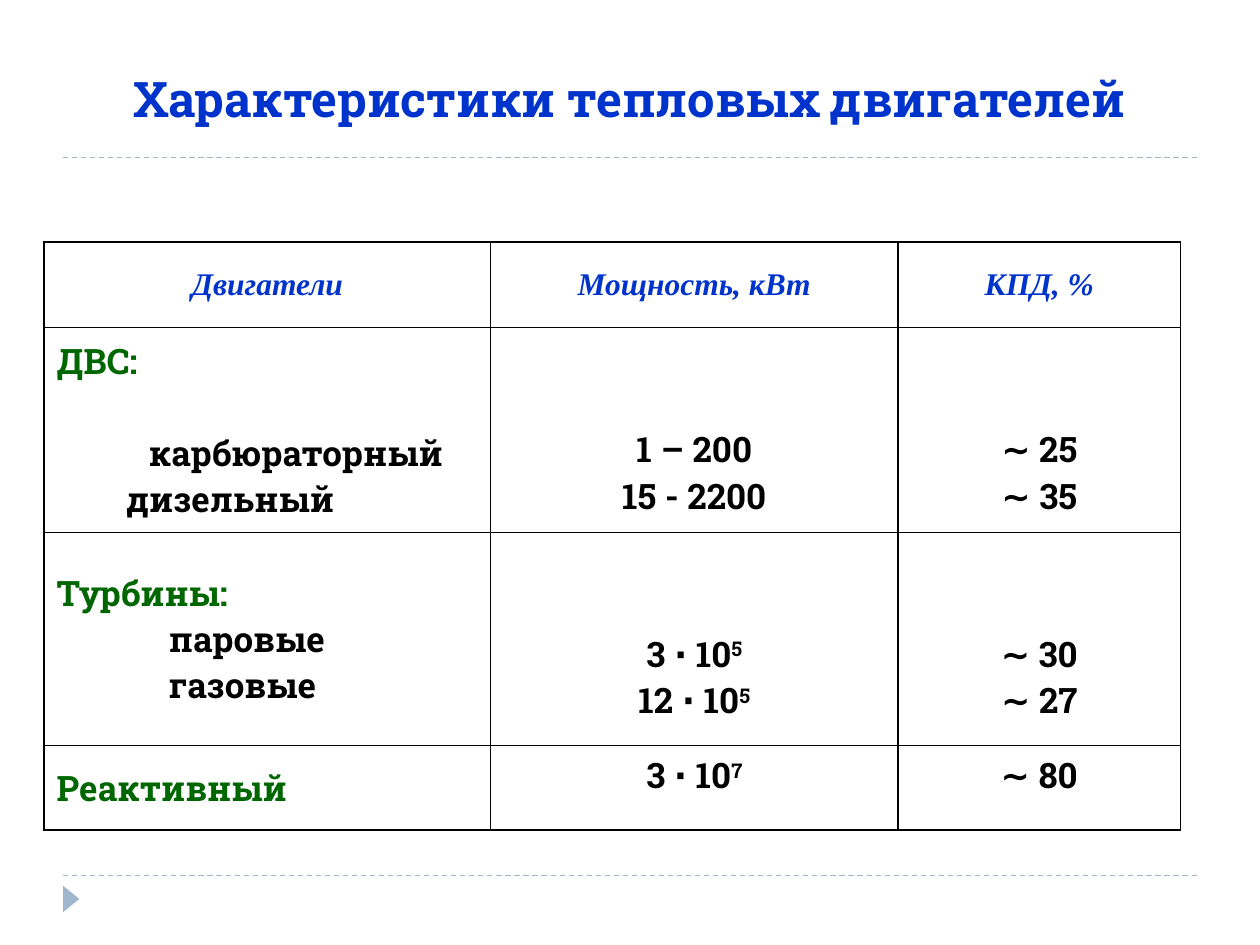
import pptx
import pptx.dml.color
import pptx.enum.dml
import pptx.enum.shapes
import pptx.enum.text
import pptx.oxml
import pptx.oxml.ns
import pptx.util
from pptx.util import Inches

BLUE, GREEN, BLACK, ACCENT = "0033CC", "006600", "000000", "9FB8CD"
SLAB, SERIF = "Roboto Slab", "Times New Roman"
ALIGN = pptx.enum.text.PP_ALIGN
ANCHOR = pptx.enum.text.MSO_ANCHOR
SHAPE = pptx.enum.shapes.MSO_SHAPE

COLUMNS = [3.54, 3.23, 2.24]
ROWS = [0.68, 1.62, 1.69, 0.67]
HEADINGS = ["Двигатели", "Мощность, кВт", "КПД, %"]
ENGINES = [
    [("ДВС:", GREEN, 0, 0), ("карбюраторный", BLACK, 0.73, 26.4),
     ("дизельный", BLACK, 0.55, 0)],
    [("Турбины:", GREEN, 0, 0), ("паровые", BLACK, 0.89, 0),
     ("газовые", BLACK, 0.89, 0)],
    [("Реактивный", GREEN, 0, 0)],
]
POWERS = [["1 – 200", "15 - 2200"], ["3 ⋅ 10^5", "12 ⋅ 10^5"], ["3 ⋅ 10^7"]]
EFFICIENCIES = [["∼ 25", "∼ 35"], ["∼ 30", "∼ 27"], ["∼ 80"]]
VALUE_TOPS = [0.78, 0.78, 0.05]


def rgb(value):
    return pptx.dml.color.RGBColor.from_string(value)


def add_run(p, text, size, color, font=SLAB, italic=False, raised=False):
    r = p.add_run()
    r.text = text
    r.font.name, r.font.size = font, pptx.util.Pt(size)
    r.font.bold, r.font.italic = True, italic
    r.font.color.rgb = rgb(color)
    if raised:
        r._r.get_or_add_rPr().set("baseline", "30000")


def add_paragraph(tf, index, align):
    p = tf.add_paragraph() if index else tf.paragraphs[0]
    p.alignment = align
    return p


def set_cell_style(cell):
    cell.fill.background()
    props = cell._tc.get_or_add_tcPr()
    for index, side in enumerate(("lnL", "lnR", "lnT", "lnB")):
        border = pptx.oxml.parse_xml(
            f'<a:{side} {pptx.oxml.ns.nsdecls("a")} w="12700">'
            f'<a:solidFill><a:srgbClr val="{BLACK}"/></a:solidFill></a:{side}>')
        props.insert(index, border)


def fill_engines(cell, lines):
    cell.vertical_anchor = ANCHOR.MIDDLE
    for i, (text, color, indent, gap) in enumerate(lines):
        p = add_paragraph(cell.text_frame, i, ALIGN.LEFT)
        p.space_before = pptx.util.Pt(gap)
        p._p.get_or_add_pPr().set("marL", str(Inches(indent)))
        add_run(p, text, 20, color)


def fill_values(cell, values, top):
    cell.margin_top = Inches(top)
    for i, value in enumerate(values):
        p = add_paragraph(cell.text_frame, i, ALIGN.CENTER)
        base, _, power = value.partition("^")
        add_run(p, base, 20, BLACK)
        if power:
            add_run(p, power, 20, BLACK, raised=True)


def add_engine_table(s, left, top, width, height):
    frame = s.shapes.add_table(len(ROWS), len(COLUMNS), Inches(left),
                               Inches(top), Inches(width), Inches(height))
    table = frame.table
    table.first_row = table.horz_banding = False
    for column, share in zip(table.columns, COLUMNS):
        column.width = Inches(width * share / sum(COLUMNS))
    for row, share in zip(table.rows, ROWS):
        row.height = Inches(height * share / sum(ROWS))
    for cell in table.iter_cells():
        set_cell_style(cell)
    for i, heading in enumerate(HEADINGS):
        cell = table.cell(0, i)
        cell.vertical_anchor = ANCHOR.MIDDLE
        p = add_paragraph(cell.text_frame, 0, ALIGN.CENTER)
        add_run(p, heading, 18, BLUE, SERIF, italic=True)
    groups = zip(ENGINES, POWERS, EFFICIENCIES, VALUE_TOPS)
    for i, (engines, powers, efficiencies, offset) in enumerate(groups, 1):
        fill_engines(table.cell(i, 0), engines)
        fill_values(table.cell(i, 1), powers, offset)
        fill_values(table.cell(i, 2), efficiencies, offset)


def add_title(s, left, top, width, height):
    box = s.shapes.add_textbox(Inches(left), Inches(top),
                               Inches(width), Inches(height))
    tf = box.text_frame
    tf.word_wrap = True
    tf.vertical_anchor = ANCHOR.BOTTOM
    tf.margin_bottom = 0
    p = add_paragraph(tf, 0, ALIGN.CENTER)
    add_run(p, "Характеристики тепловых двигателей", 28, BLUE)


def add_rule(s, left, top, width):
    line = s.shapes.add_connector(
        pptx.enum.shapes.MSO_CONNECTOR.STRAIGHT, Inches(left), Inches(top),
        Inches(left + width), Inches(top))
    line.line.color.rgb = rgb(ACCENT)
    line.line.width = pptx.util.Pt(0.75)
    line.line.dash_style = pptx.enum.dml.MSO_LINE.DASH
    line._element.spPr.append(pptx.oxml.parse_xml(
        f'<a:effectLst {pptx.oxml.ns.nsdecls("a")}/>'))


def add_marker(s, left, top, width, height):
    marker = s.shapes.add_shape(SHAPE.ISOSCELES_TRIANGLE, Inches(left),
                                Inches(top), Inches(width), Inches(height))
    marker.rotation = 90
    marker.shadow.inherit = False
    marker.fill.solid()
    marker.fill.fore_color.rgb = rgb(ACCENT)
    marker.line.fill.background()


def main():
    prs = pptx.Presentation()
    prs.slide_width, prs.slide_height = Inches(10), Inches(7.5)
    s = prs.slides.add_slide(prs.slide_layouts[6])
    for top in (6.95, 1.25):
        add_rule(s, 0.5, top, 9)
    add_marker(s, 0.46, 7.07, 0.21, 0.13)
    add_title(s, 0.62, 0.31, 8.75, 0.7)
    add_engine_table(s, 0.35, 1.92, 9.02, 4.67)
    prs.save("out.pptx")


if __name__ == "__main__":
    main()
